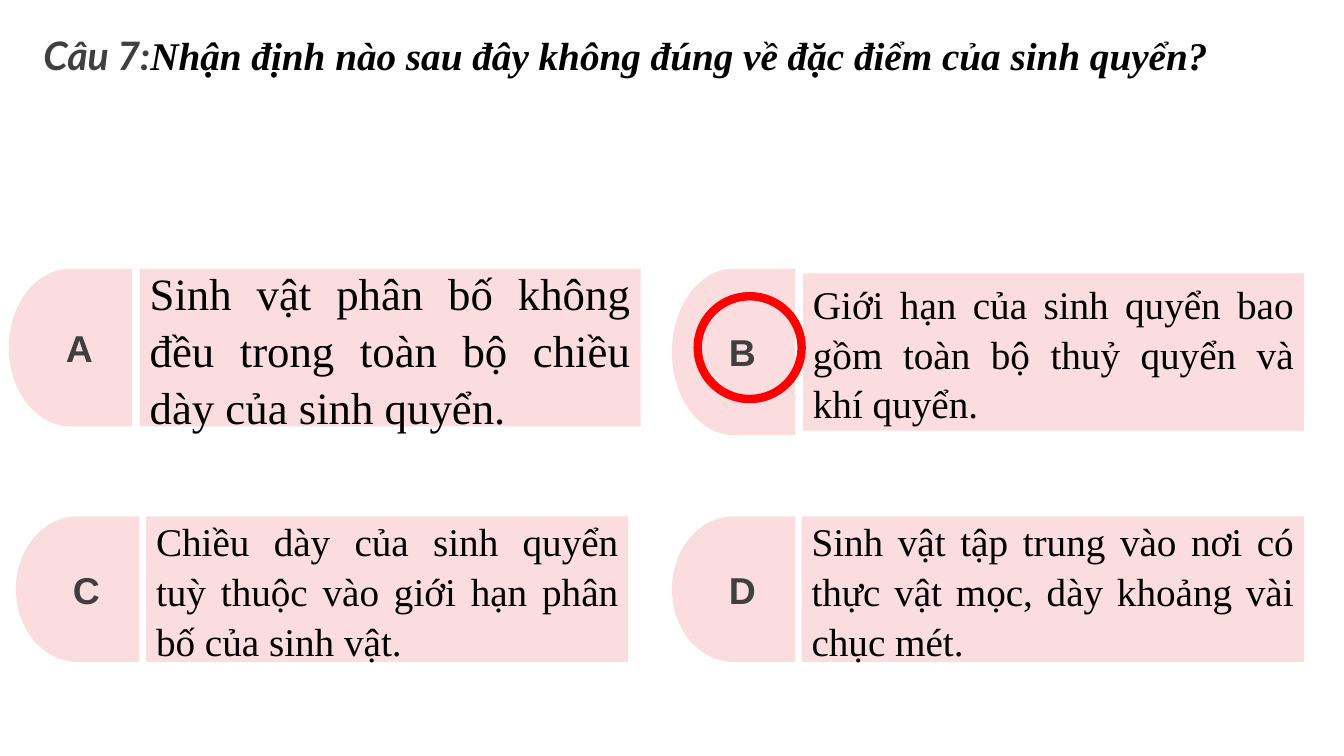
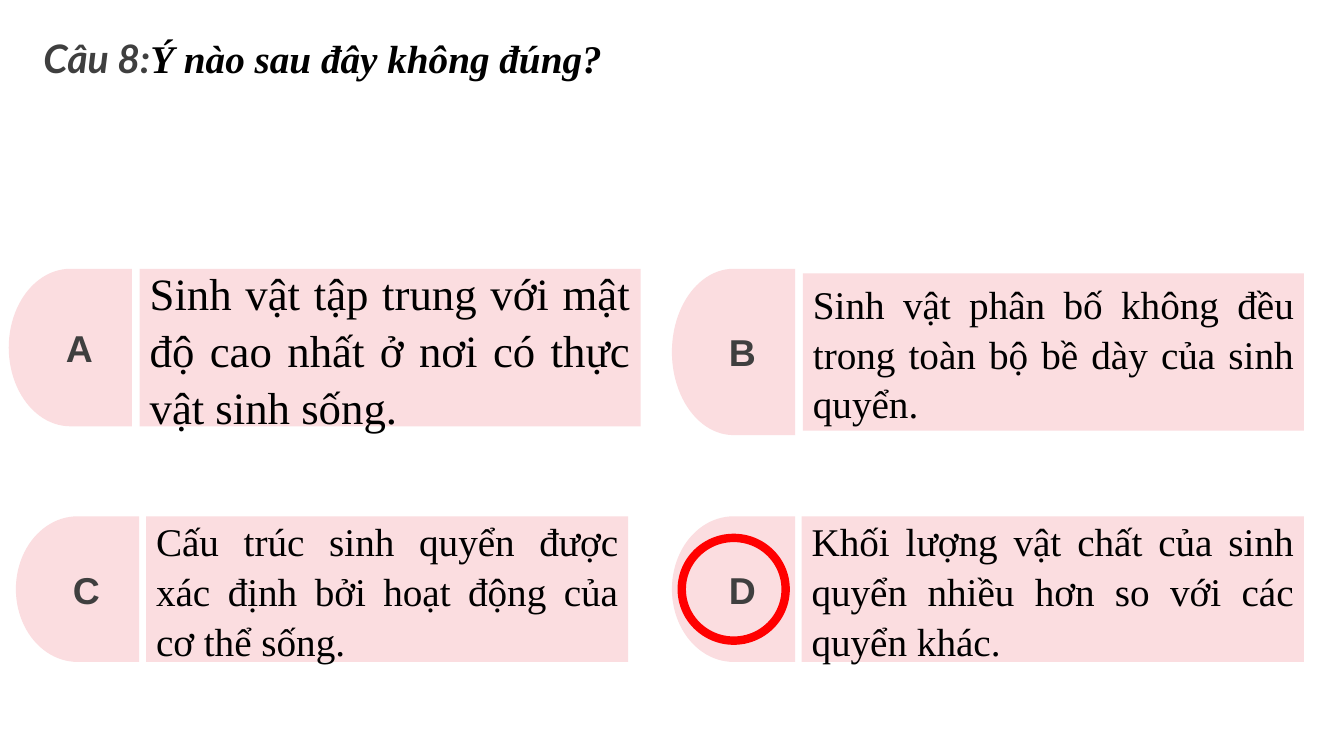
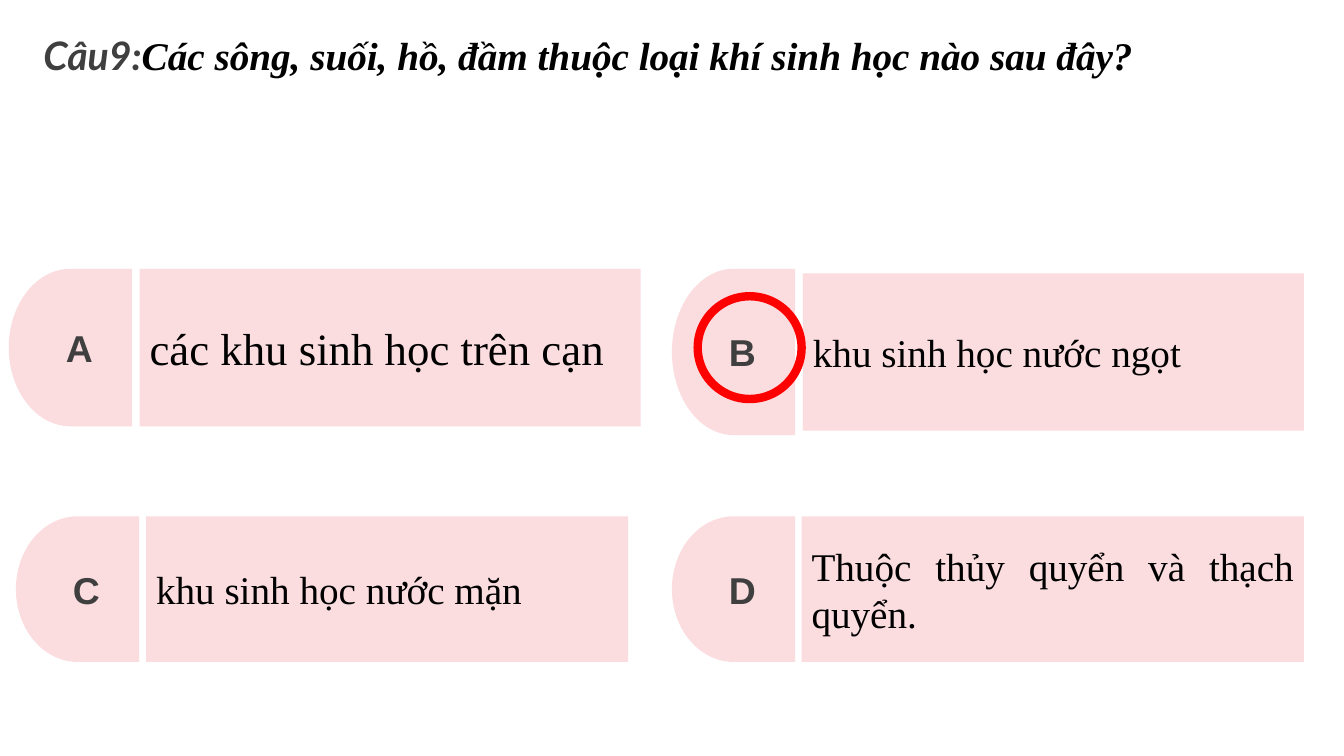
from pptx import Presentation
from pptx.dml.color import RGBColor
from pptx.enum import shapes, text
from pptx.util import Pt

COLOURS = {"panel": "FBDDE0", "label": "3F3F3F", "ink": "000000", "ring": "FF0000"}
SERIF = "Times New Roman"
RING_WIDTH, RING_HEIGHT = 74.2, 73.4

# letter: (tab box, answer box, answer size); boxes are left, top, width, height
OPTIONS = {
    "A": ((6.3, 192, 88, 112.5), (99.8, 192, 357.8, 112.5), 32),
    "B": ((480, 192, 88, 118.8), (573.6, 195.2, 357.8, 112.5), 28),
    "C": ((11.4, 368.8, 88, 104), (104.4, 368.8, 344.4, 104), 28),
    "D": ((480, 368.8, 88, 104), (572.6, 368.8, 358.8, 104), 28),
}

QUESTIONS = [
    {
        "number": "Câu 7:",
        "question": "Nhận định nào sau đây không đúng về đặc điểm của sinh quyển?",
        "answers": {
            "A": "Sinh vật phân bố không đều trong toàn bộ chiều dày của sinh quyển.",
            "B": "Giới hạn của sinh quyển bao gồm toàn bộ thuỷ quyển và khí quyển.",
            "C": "Chiều dày của sinh quyển tuỳ thuộc vào giới hạn phân bố của sinh vật.",
            "D": "Sinh vật tập trung vào nơi có thực vật mọc, dày khoảng vài chục mét.",
        },
        "title_spacing": 1.0, "answer_spacing": 1.06, "ring_at": (498.4, 211.6),
    },
    {
        "number": "Câu 8:",
        "question": "Ý nào sau đây không đúng?",
        "answers": {
            "A": "Sinh vật tập trung với mật độ cao nhất ở nơi có thực vật sinh sống.",
            "B": "Sinh vật phân bố không đều trong toàn bộ bề dày của sinh quyển.",
            "C": "Cấu trúc sinh quyển được xác định bởi hoạt động của cơ thể sống.",
            "D": "Khối lượng vật chất của sinh quyển nhiều hơn so với các quyển khác.",
        },
        "title_spacing": 1.06, "answer_spacing": 1.06, "ring_at": (487, 384.2),
    },
    {
        "number": "Câu9:",
        "question": "Các sông, suối, hồ, đầm thuộc loại khí sinh học nào sau đây?",
        "answers": {
            "A": "các khu sinh học trên cạn",
            "B": "khu sinh học nước ngọt",
            "C": "khu sinh học nước mặn",
            "D": "Thuộc thủy quyển và thạch quyển.",
        },
        "title_spacing": 1.0, "answer_spacing": 1.0, "ring_at": (498.4, 211.6),
    },
]


def write(frame, words, *, size, font, colour, bold=False, italic=False,
          align=text.PP_ALIGN.JUSTIFY, spacing=1.0):
    """Append a formatted run to the first paragraph of a text frame."""
    paragraph = frame.paragraphs[0]
    paragraph.alignment, paragraph.line_spacing = align, spacing
    run = paragraph.add_run()
    run.text = words
    run.font.size, run.font.name = Pt(size), font
    run.font.bold, run.font.italic = bold, italic
    run.font.color.rgb = RGBColor.from_string(COLOURS[colour])


def add_panel(slide, kind, box):
    """Add a borderless pink shape with its text centred vertically."""
    panel = slide.shapes.add_shape(kind, *map(Pt, box))
    panel.shadow.inherit = False
    panel.fill.solid()
    panel.fill.fore_color.rgb = RGBColor.from_string(COLOURS["panel"])
    panel.line.fill.background()
    panel.text_frame.word_wrap = True
    panel.text_frame.vertical_anchor = text.MSO_ANCHOR.MIDDLE
    return panel


deck = Presentation()
deck.slide_width, deck.slide_height = Pt(960), Pt(540)
title_only = deck.slide_layouts[5]

for item in QUESTIONS:
    slide = deck.slides.add_slide(title_only)

    heading = slide.shapes.title
    heading.left, heading.top, heading.width, heading.height = map(Pt, (31, 22.3, 892.8, 34))
    frame = heading.text_frame
    frame.margin_left = frame.margin_top = frame.margin_right = frame.margin_bottom = 0
    frame.word_wrap = True
    frame.auto_size = text.MSO_AUTO_SIZE.SHAPE_TO_FIT_TEXT
    frame.vertical_anchor = text.MSO_ANCHOR.TOP
    for words, font, colour in ((item["number"], "Lato", "label"),
                                (item["question"], SERIF, "ink")):
        write(frame, words, size=28, font=font, colour=colour, bold=True, italic=True,
              spacing=item["title_spacing"])

    for letter, (tab_box, answer_box, answer_size) in OPTIONS.items():
        tab = add_panel(slide, shapes.MSO_SHAPE.FLOWCHART_DELAY, tab_box)
        tab._element.spPr.get_or_add_xfrm().set("flipH", "1")
        write(tab.text_frame, letter, size=26.7, font="Arial", colour="label", bold=True,
              align=text.PP_ALIGN.CENTER)
        answer = add_panel(slide, shapes.MSO_SHAPE.RECTANGLE, answer_box)
        write(answer.text_frame, item["answers"][letter], size=answer_size, font=SERIF,
              colour="ink", spacing=item["answer_spacing"])

    ring = slide.shapes.add_shape(shapes.MSO_SHAPE.OVAL,
                                  *map(Pt, (*item["ring_at"], RING_WIDTH, RING_HEIGHT)))
    ring.shadow.inherit = False
    ring.fill.background()
    ring.line.color.rgb = RGBColor.from_string(COLOURS["ring"])
    ring.line.width = Pt(6)

deck.save("out.pptx")
